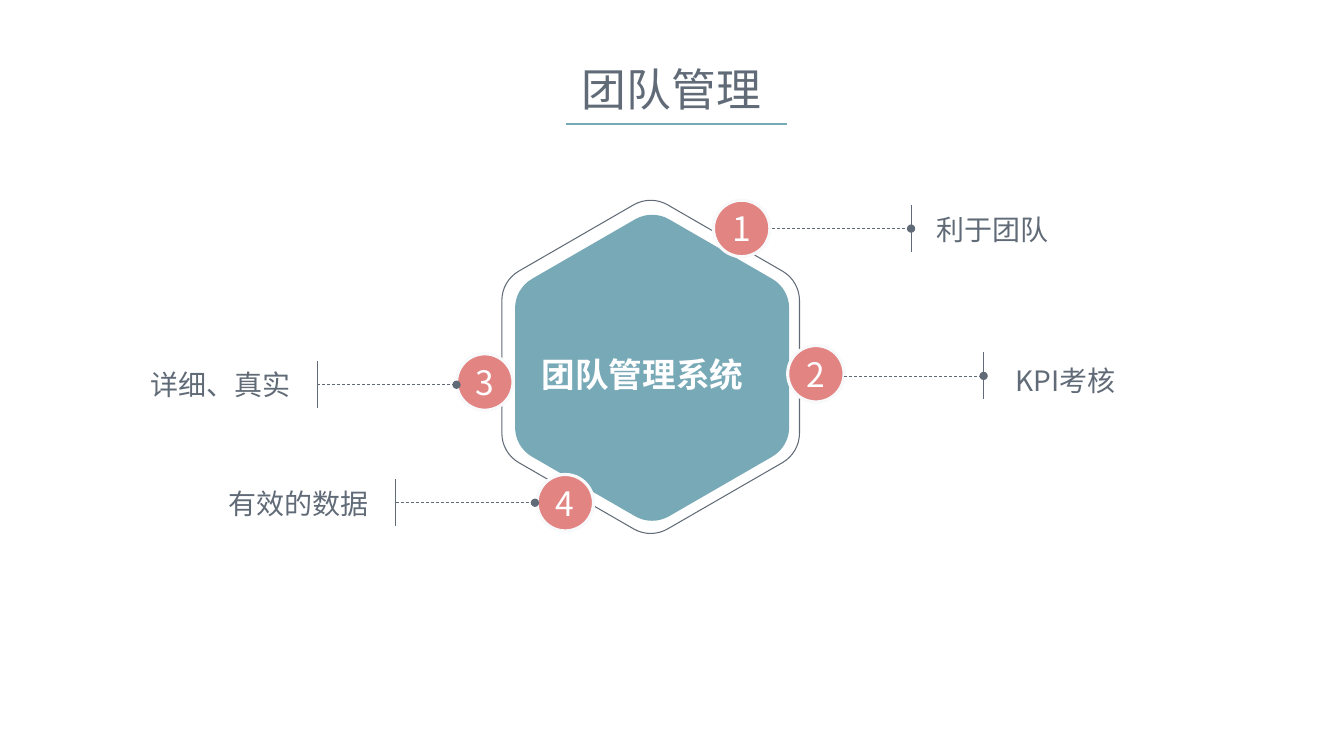
from math import cos, radians, sin, sqrt, tan

from lxml import etree
from pptx import Presentation
from pptx.dml.color import RGBColor
from pptx.enum import dml, shapes, text
from pptx.oxml.ns import qn
from pptx.util import Pt

SLATE = RGBColor(0x61, 0x6B, 0x77)
TEAL = RGBColor(0x78, 0xA9, 0xB7)
CORAL = RGBColor(0xE1, 0x84, 0x82)
PALE = RGBColor(0xF8, 0xF9, 0xFB)
WHITE = RGBColor(0xFF, 0xFF, 0xFF)
FONT = "Noto Sans CJK SC"

MARKER = 40.3
LEADER = 99.4
TICK = 33.6
LABEL_HEIGHT = 31.7
CORNER_POINTS = 7  # arc start, then two Bézier curves of three points

# number, marker centre, leader start, side, label box (left, top, width), label
POINTS = [
    ("1", (529.8, 163.2), (551.4, 163.3), "right", (661.7, 148.3, 95), "利于团队"),
    ("2", (582.8, 267), (603.2, 268.5), "right", (718.2, 255.8, 91.4), "KPI考核"),
    ("3", (346.3, 272.9), (226.7, 274.8), "left", (100.1, 259.2, 115.2), "详细、真实"),
    ("4", (403.8, 359.1), (282.7, 359.1), "left", (156.2, 344.2, 115.2), "有效的数据"),
]


def write(frame, words, size, color, align, bold=False):
    paragraph = frame.paragraphs[0]
    paragraph.alignment = align
    run = paragraph.add_run()
    run.text = words
    for name, value in dict(name=FONT, size=Pt(size), bold=bold).items():
        setattr(run.font, name, value)
    run.font.color.rgb = color
    # East Asian characters take their typeface from a:ea
    etree.SubElement(run.font._element, qn("a:ea")).set("typeface", FONT)


def add_label(slide, box, words, size, color, align, bold=False, **frame_format):
    label = slide.shapes.add_textbox(*map(Pt, box))
    for name, value in frame_format.items():
        setattr(label.text_frame, name, value)
    write(label.text_frame, words, size, color, align, bold)


def add_line(slide, start, end, color, width):
    line = slide.shapes.add_connector(
        shapes.MSO_CONNECTOR.STRAIGHT, *map(Pt, (*start, *end)))
    line.line.color.rgb = color
    line.line.width = Pt(width)
    etree.SubElement(line._element.spPr, qn("a:effectLst"))
    return line


def add_title(slide, box):
    left, top, width, height = box
    add_label(slide, box, "团队管理", 32, SLATE, text.PP_ALIGN.CENTER, word_wrap=False)
    rule_y = top + height + 2.2
    add_line(slide, (left - 3, rule_y), (left + width + 10.8, rule_y), TEAL, 1.5)


def hexagon_outline(center, half_width, trim):
    """Line ends and Bézier points, clockwise from the top corner."""
    arc = trim * sqrt(3)
    reach = half_width / cos(radians(30)) - 2 * trim
    handle = 4 / 3 * tan(radians(30) / 4) * arc
    outline = []
    for vertex in range(0, 360, 60):
        corner = radians(vertex)
        for sweep, shift in ((-30, 0), (-30, 1), (0, -1), (0, 0), (0, 1), (30, -1), (30, 0)):
            turn = radians(vertex + sweep)
            along = shift * handle
            outline.append(
                (center[0] + reach * sin(corner) + arc * sin(turn) + along * cos(turn),
                 center[1] - reach * cos(corner) - arc * cos(turn) + along * sin(turn)))
    return outline


def add_hexagon(slide, center, half_width, trim=14):
    """Pointed-top hexagon whose rounded corners start `trim` before each vertex."""
    outline = [(Pt(x), Pt(y)) for x, y in hexagon_outline(center, half_width, trim)]
    builder = slide.shapes.build_freeform(*outline[0])
    builder.add_line_segments(outline[1:], close=True)
    hexagon = builder.convert_to_shape()
    hexagon.shadow.inherit = False
    steps = list(next(hexagon._element.iter(qn("a:path"))))[:len(outline)]
    for corner in range(0, len(steps), CORNER_POINTS):
        for first in (corner + 1, corner + 4):
            curve = etree.Element(qn("a:cubicBezTo"))
            steps[first].addprevious(curve)
            for step in steps[first:first + 3]:
                curve.append(step[0])
                step.getparent().remove(step)
    return hexagon


def add_core(slide, box):
    left, top, width, height = box
    middle = top + height / 2
    core = add_hexagon(slide, (left + width / 2 + 1, middle + 0.6), width / 2 - 8.4)
    core.fill.solid()
    core.fill.fore_color.rgb = TEAL
    core.line.fill.background()
    add_label(slide, (left + 15.4, middle - 9.4, 170, 28.8), "团队管理系统", 24, WHITE,
              text.PP_ALIGN.CENTER, bold=True, word_wrap=True, margin_left=0,
              margin_top=0, margin_right=0, margin_bottom=0)
    border = add_hexagon(slide, (left + width / 2, middle), width / 2)
    border.fill.background()
    border.line.color.rgb = SLATE
    border.line.width = Pt(0.75)


def add_marker(slide, center, number):
    corner = [position - MARKER / 2 for position in center]
    marker = slide.shapes.add_shape(
        shapes.MSO_SHAPE.OVAL, *map(Pt, (*corner, MARKER, MARKER)))
    marker.shadow.inherit = False
    marker.fill.solid()
    marker.fill.fore_color.rgb = CORAL
    marker.line.color.rgb = PALE
    marker.line.width = Pt(2.25)
    marker.text_frame.vertical_anchor = text.MSO_ANCHOR.MIDDLE
    write(marker.text_frame, number, 24, WHITE, text.PP_ALIGN.CENTER)


def add_leader(slide, start, side):
    """Dashed line with a dot at its right end and a tick at its outer end."""
    x, y = start
    dashes = add_line(slide, start, (x + LEADER, y), SLATE, 0.5)
    dashes.line.dash_style = dml.MSO_LINE.DASH
    etree.SubElement(dashes.line._ln, qn("a:tailEnd")).set("type", "oval")
    tick_x = x + LEADER if side == "right" else x
    add_line(slide, (tick_x, y - TICK / 2), (tick_x, y + TICK / 2), SLATE, 0.5)


def main():
    deck = Presentation()
    deck.slide_width, deck.slide_height = Pt(960), Pt(540)
    slide = deck.slides.add_slide(deck.slide_layouts[6])
    add_title(slide, (407.6, 40.4, 144, 46))
    add_core(slide, (358.5, 142.6, 212.6, 239))
    for number, center, start, side, label_box, words in POINTS:
        add_marker(slide, center, number)
        add_leader(slide, start, side)
        add_label(slide, (*label_box, LABEL_HEIGHT), words, 20, SLATE,
                  text.PP_ALIGN.LEFT, word_wrap=False)
    deck.save("out.pptx")


if __name__ == "__main__":
    main()
